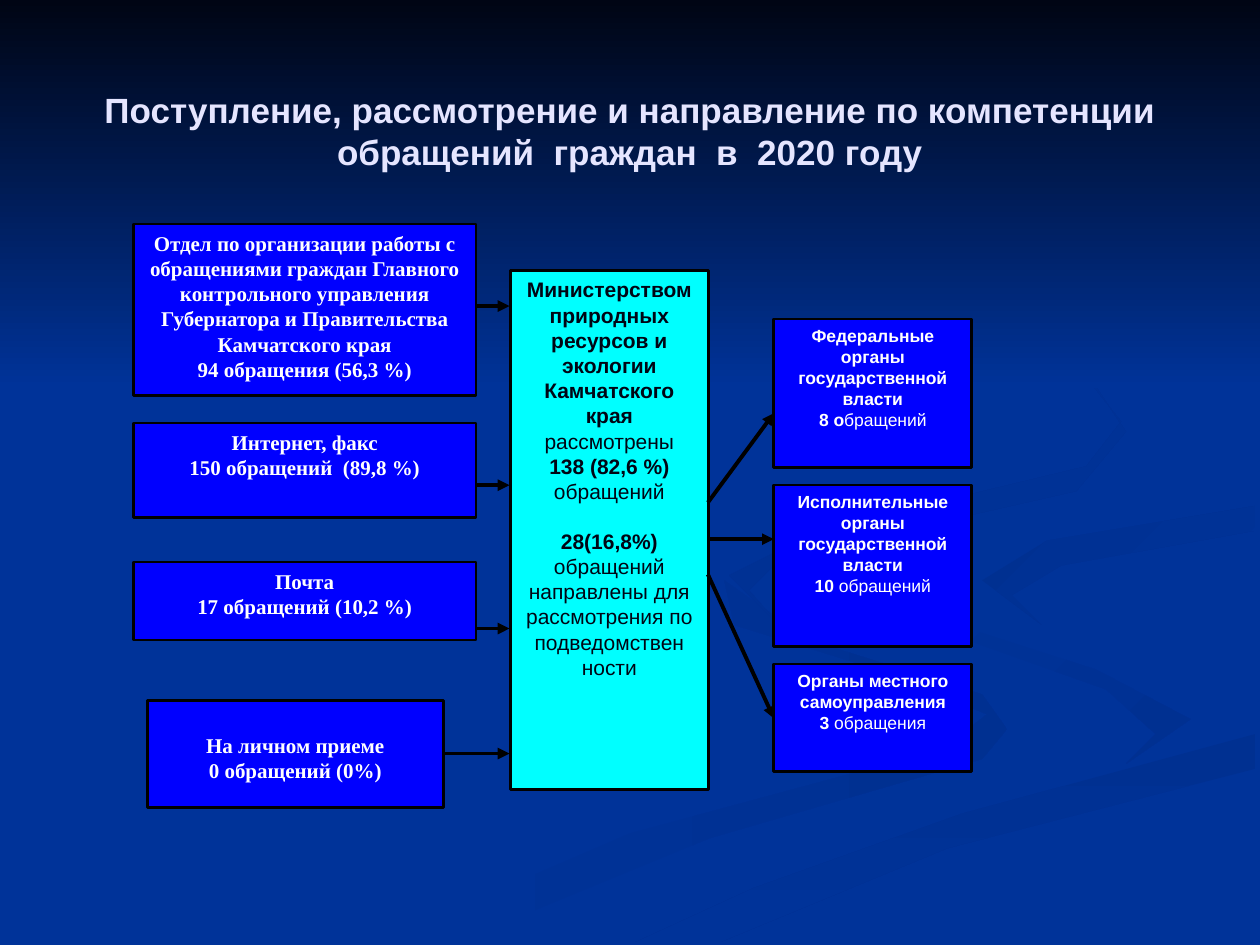
from dataclasses import dataclass

from lxml.etree import SubElement
from pptx import Presentation
from pptx.dml.color import RGBColor
from pptx.enum.shapes import MSO_CONNECTOR, MSO_SHAPE
from pptx.enum.text import MSO_ANCHOR, PP_ALIGN
from pptx.oxml.ns import qn
from pptx.util import Cm, Pt


@dataclass(frozen=True)
class Theme:
    """Colours, fonts and type sizes of the slide."""
    ground: str = "003399"
    shade: str = "003091"
    night: str = "000514"
    title: str = "E5E5FF"
    box: str = "0000FF"
    ministry: str = "00FFFF"
    light: str = "FFFFFF"
    line: str = "000000"
    sans: str = "Arial"
    serif: str = "Times New Roman"
    title_size: int = 20
    body_size: int = 12
    small_size: int = 10
    border: float = 1.5
    arrow: float = 2.25


THEME = Theme()
UNIT = Cm(0.1)

SWIRLS = [
    (THEME.ground, THEME.shade, 0, [
        (198, 140), (163, 129), (146, 117), (148, 126), (177, 135), (199, 144), (190, 151),
        (127, 168), (76, 190), (92, 190), (143, 169), (198, 153), (203, 147)]),
    (THEME.ground, THEME.shade, 315, [
        (240, 145), (221, 135), (193, 126), (184, 118), (192, 128), (223, 139), (233, 148), (227, 154)]),
    (THEME.shade, THEME.ground, 270, [
        (128, 190), (145, 190), (191, 171), (253, 155), (253, 148), (194, 164), (152, 179)]),
    (THEME.shade, THEME.ground, 315, [
        (198, 117), (210, 126), (204, 120), (214, 114), (253, 107), (253, 102), (211, 109)]),
    (THEME.shade, THEME.ground, 315, [
        (173, 109), (217, 99), (227, 87), (217, 72), (194, 59), (215, 71), (226, 85), (219, 94),
        (165, 107), (147, 116), (158, 127), (151, 119), (158, 112)]),
]

MINISTRY_TEXT = [
    "Министерством природных ресурсов и экологии Камчатского края |рассмотрены",
    "138 (82,6 %) |обращений",
    "28(16,8%)",
    "|обращений направлены для рассмотрения по подведомствен",
    "|ности",
]

RECIPIENTS = [
    (6.43, 3, 10.13, 8.33, ["Федеральные органы государственной власти", "8 о|бращений"]),
    (9.78, 3.25, 10.87, 10.87, ["Исполнительные органы государственной власти", "10 |обращений"]),
    (13.39, 2.16, 11.58, 14.48, ["Органы местного самоуправления", "3 |обращения"]),
]

MAIN_SOURCES = [
    (4.52, 3.45, 6.17, ["Отдел по организации работы с обращениями граждан Главного контрольного "
                        "управления Губернатора и Правительства Камчатского края",
                        "94 обращения (56,3 %)"]),
    (8.53, 1.9, 9.78, ["Интернет, факс", "150 обращений  (89,8 %)"]),
    (11.33, 1.57, 12.67, ["Почта", "17 обращений (10,2 %)"]),
]


def rgb(value):
    """Turn a hex string into a colour."""
    return RGBColor.from_string(value)


def paint_gradient(sp, start, end, angle):
    """Fill a shape with a two-stop gradient and no outline."""
    sp.shadow.inherit = False
    sp.line.fill.background()
    sp.fill.gradient()
    sp.fill.gradient_angle = angle
    for stop, color in zip(sp.fill.gradient_stops, (start, end)):
        stop.color.rgb = rgb(color)


def add_backdrop(s, width):
    """Draw the background swirls and the dark band at the top."""
    s.background.fill.solid()
    s.background.fill.fore_color.rgb = rgb(THEME.ground)
    for start, end, angle, points in SWIRLS:
        builder = s.shapes.build_freeform(*points[0], scale=UNIT)
        builder.add_line_segments(points[1:], close=True)
        paint_gradient(builder.convert_to_shape(), start, end, angle)
    band = s.shapes.add_shape(MSO_SHAPE.RECTANGLE, 0, 0, width, Cm(7.82))
    paint_gradient(band, THEME.night, THEME.ground, 270)


def write(tf, lines, font, size, color):
    """Write centred lines, bold before a bar and regular after it."""
    tf.word_wrap = True
    for i, line in enumerate(lines):
        p = tf.paragraphs[0] if i == 0 else tf.add_paragraph()
        p.alignment = PP_ALIGN.CENTER
        for text, bold in zip(line.split("|"), (True, False)):
            if text:
                r = p.add_run()
                r.text = text
                r.font.name, r.font.size, r.font.bold = font, Pt(size), bold
                r.font.color.rgb = rgb(color)


def add_title(s, text):
    """Add the slide title."""
    tf = s.shapes.add_textbox(Cm(1.27), Cm(0.76), Cm(22.86), Cm(3.76)).text_frame
    write(tf, [text], THEME.sans, THEME.title_size, THEME.title)
    tf.vertical_anchor = MSO_ANCHOR.MIDDLE


def add_box(s, left, top, width, height, lines, font, size, fill=THEME.box, color=THEME.light):
    """Add an outlined box with text from its top edge."""
    sp = s.shapes.add_shape(MSO_SHAPE.RECTANGLE, Cm(left), Cm(top), Cm(width), Cm(height))
    sp.shadow.inherit = False
    sp.fill.solid()
    sp.fill.fore_color.rgb = rgb(fill)
    sp.line.color.rgb = rgb(THEME.line)
    sp.line.width = Pt(THEME.border)
    write(sp.text_frame, lines, font, size, color)
    sp.text_frame.vertical_anchor = MSO_ANCHOR.TOP
    return sp.text_frame


def add_arrow(s, x1, y1, x2, y2):
    """Add a straight arrow."""
    c = s.shapes.add_connector(MSO_CONNECTOR.STRAIGHT, Cm(x1), Cm(y1), Cm(x2), Cm(y2))
    c.line.color.rgb = rgb(THEME.line)
    c.line.width = Pt(THEME.arrow)
    SubElement(c.line._get_or_add_ln(), qn("a:tailEnd"), type="triangle")
    SubElement(c._element.spPr, qn("a:effectLst"))


def add_source(s, left, top, width, height, level, lines):
    """Add a source of appeals with its arrow to the ministry."""
    add_arrow(s, 8.92, level, 10.27, level)
    return add_box(s, left, top, width, height, lines, THEME.serif, THEME.body_size)


def main():
    """Build and save the slide."""
    prs = Presentation()
    prs.slide_width, prs.slide_height = Cm(25.4), Cm(19.05)
    s = prs.slides.add_slide(prs.slide_layouts[6])
    add_backdrop(s, prs.slide_width)
    add_title(s, "Поступление, рассмотрение и направление по компетенции обращений  граждан  в  2020 году")
    tf = add_box(s, 10.29, 5.46, 3.99, 10.46, MINISTRY_TEXT, THEME.sans, THEME.body_size,
                 THEME.ministry, THEME.night)
    tf.paragraphs[2].space_before = Pt(14)
    for top, height, start, end, lines in RECIPIENTS:
        add_box(s, 15.6, top, 3.99, height, lines, THEME.sans, THEME.small_size)
        add_arrow(s, 14.27, start, 15.6, end)
    for top, height, level, lines in MAIN_SOURCES:
        add_source(s, 2.69, top, 6.91, height, level, lines)
    tf = add_source(s, 2.97, 14.12, 5.97, 2.16, 15.19, ["На личном приеме", "0 обращений (0%)"])
    tf.margin_top = Cm(0.65)
    prs.save("out.pptx")


if __name__ == "__main__":
    main()
